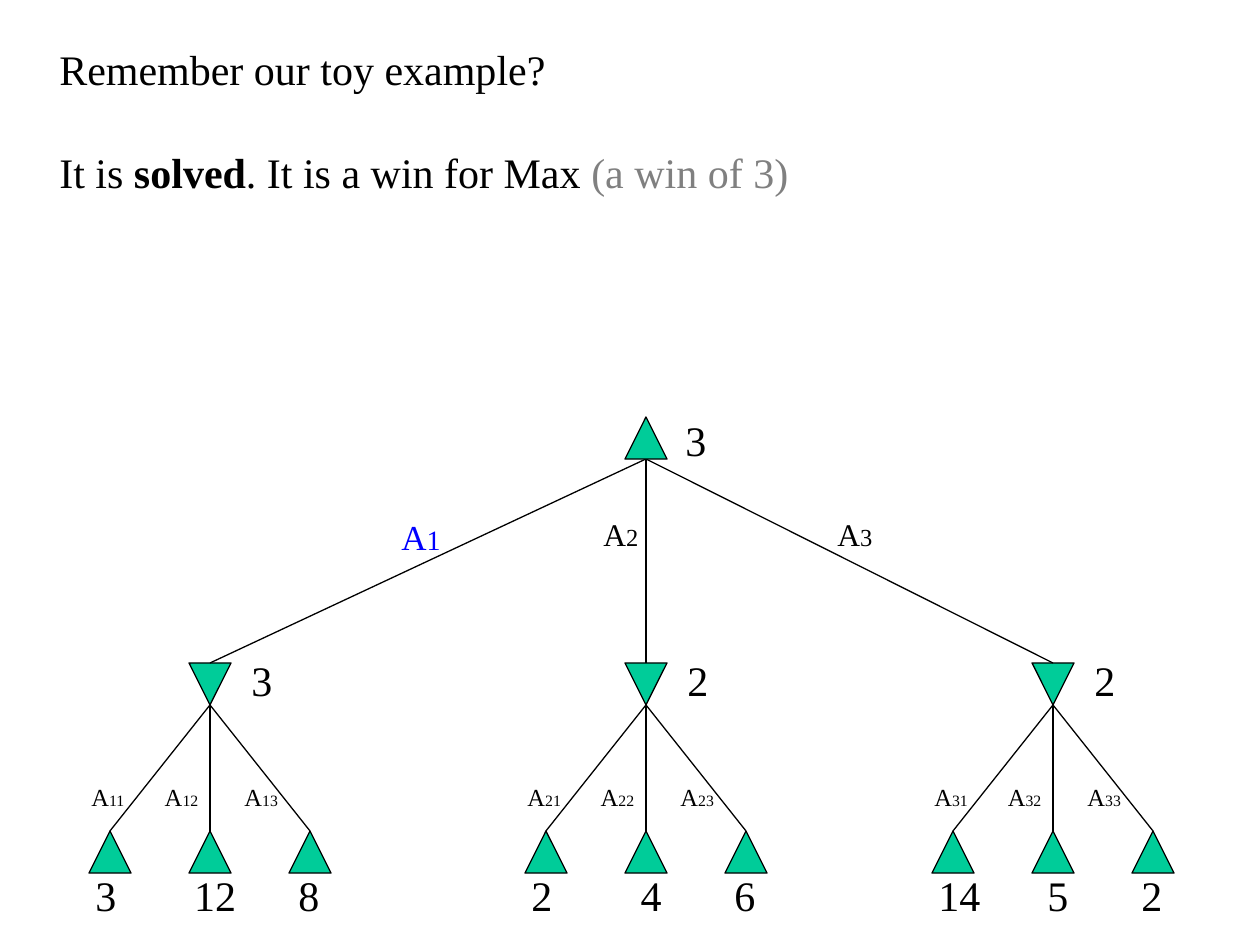
"""Build a slide showing a solved two-ply game tree."""
from lxml import etree
from pptx import Presentation
from pptx.dml.color import RGBColor
from pptx.enum.shapes import MSO_CONNECTOR, MSO_SHAPE
from pptx.enum.text import MSO_AUTO_SIZE, PP_ALIGN
from pptx.oxml.ns import qn
from pptx.util import Emu, Pt

TRIANGLE = MSO_SHAPE.ISOSCELES_TRIANGLE
STRAIGHT = MSO_CONNECTOR.STRAIGHT
LEFT, CENTER = PP_ALIGN.LEFT, PP_ALIGN.CENTER
GROW = MSO_AUTO_SIZE.SHAPE_TO_FIT_TEXT
FONT = "Times New Roman"
COLORS = {"ink": "000000", "node": "00CC99", "best": "0000FF", "aside": "808080"}

SCALE = 914400 / 126
NODE = 42
ROOT_X, ROOT_TOP, MIN_TOP, LEAF_TOP = 646, 417, 663, 831
LEAF_STEP = 100
VALUE_TOP, LABEL_TOP = 863, 776
VALUE_OFFSETS = (-127, 5, 76)
LABEL_OFFSETS = (-131, -58, 22)
SUBTREES = [
    (210, "3", ("3", "12", "8")),
    (646, "2", ("2", "4", "6")),
    (1053, "2", ("14", "5", "2")),
]
MOVES = [
    ("1", 389, 509, 66, 55, 20, 16, "best"),
    ("2", 591, 509, 60, 50, 18, 14, "ink"),
    ("3", 825, 509, 60, 50, 18, 14, "ink"),
]


def px(length):
    """Turn px into EMU."""
    return Emu(round(length * SCALE))


def rgb(name):
    """Look up a colour by its name."""
    return RGBColor.from_string(COLORS[name])


def add_span(para, text, size, color="ink", bold=None):
    """Add one formatted run to a paragraph."""
    span = para.add_run()
    span.text = text
    span.font.name = FONT
    span.font.size = Pt(size)
    span.font.bold = bold
    span.font.color.rgb = rgb(color)


def add_box(shapes, left, top, width, height, wrap=False):
    """Add an empty text box and return its text frame."""
    frame = shapes.add_textbox(px(left), px(top), px(width), px(height)).text_frame
    frame.word_wrap = wrap
    frame.auto_size = GROW
    return frame


def add_value(shapes, left, top, text, align=LEFT):
    """Add the number that belongs to a node."""
    width = 27 + 20 * len(text)
    para = add_box(shapes, left, top, width, 63).paragraphs[0]
    para.alignment = align
    add_span(para, text, 24)


def add_label(shapes, area, index, sizes, color="ink", align=LEFT):
    """Add a move name with its smaller index."""
    para = add_box(shapes, *area).paragraphs[0]
    para.alignment = align
    add_span(para, "A", sizes[0], color)
    add_span(para, index, sizes[1], color)


def add_node(shapes, center, top, flipped=False):
    """Add a triangle pointing up for Max or down for Min."""
    node = shapes.add_shape(TRIANGLE, px(center - NODE / 2), px(top), px(NODE), px(NODE))
    node.shadow.inherit = False
    node.fill.solid()
    node.fill.fore_color.rgb = rgb("node")
    node.line.color.rgb = rgb("ink")
    node.line.width = Pt(0.75)
    if flipped:
        node._element.spPr.find(qn("a:xfrm")).set("flipV", "1")


def add_edge(shapes, start, end):
    """Add a thin line between two points."""
    edge = shapes.add_connector(STRAIGHT, *map(px, start + end))
    edge.line.color.rgb = rgb("ink")
    edge.line.width = Pt(0.75)
    etree.SubElement(edge._element.spPr, qn("a:effectLst"))


def add_subtree(shapes, number, center, value, leaves):
    """Add a Min node with its three leaves."""
    add_node(shapes, center, MIN_TOP, flipped=True)
    add_value(shapes, center + 29, 648, value)
    for place, leaf in enumerate(leaves):
        leaf_x = center + (place - 1) * LEAF_STEP
        add_node(shapes, leaf_x, LEAF_TOP)
        add_edge(shapes, (center, MIN_TOP + NODE), (leaf_x, LEAF_TOP))
        align = CENTER if place == 1 else LEFT
        left = center + VALUE_OFFSETS[place]
        if align == CENTER:
            left -= (27 + 20 * len(leaf)) / 2
        add_value(shapes, left, VALUE_TOP, leaf, align)
        area = (center + LABEL_OFFSETS[place], LABEL_TOP, 59, 42)
        add_label(shapes, area, f"{number}{place + 1}", (14, 9), align=align)


def add_tree(page):
    """Add the whole game tree as nested groups."""
    tree = page.shapes.add_group_shape().shapes
    for number, (center, value, leaves) in enumerate(SUBTREES, 1):
        add_subtree(tree.add_group_shape().shapes, number, center, value, leaves)
        add_edge(tree, (ROOT_X, ROOT_TOP + NODE), (center, MIN_TOP))
    add_value(tree, 673, 408, "3")
    for index, left, top, width, height, size, small, color in MOVES:
        add_label(tree, (left, top, width, height), index, (size, small), color)
    add_node(tree, ROOT_X, ROOT_TOP)


def add_message(page):
    """Add the two lines of text at the top."""
    frame = add_box(page.shapes, 47, 37, 1157, 165, wrap=True)
    add_span(frame.paragraphs[0], "Remember our toy example?", 24)
    para = frame.add_paragraph()
    para.space_before = Pt(30)
    add_span(para, "It is ", 24)
    add_span(para, "solved", 24, bold=True)
    add_span(para, ". It is a win for Max ", 24)
    add_span(para, "(a win of 3)", 24, "aside")


def main():
    """Build and save the deck."""
    deck = Presentation()
    deck.slide_width, deck.slide_height = px(1260), px(945)
    page = deck.slides.add_slide(deck.slide_layouts[6])
    add_tree(page)
    add_message(page)
    deck.save("out.pptx")


if __name__ == "__main__":
    main()
